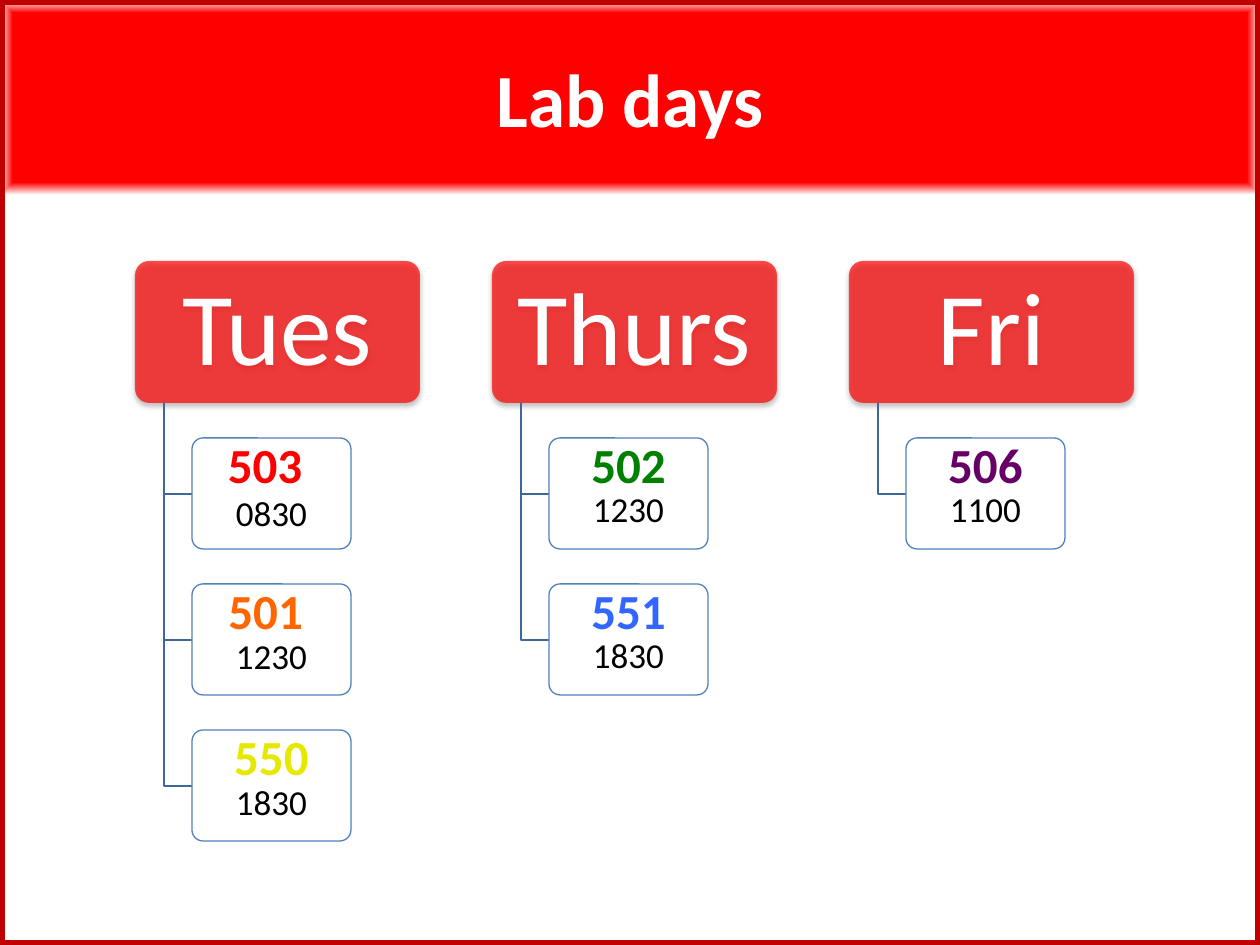
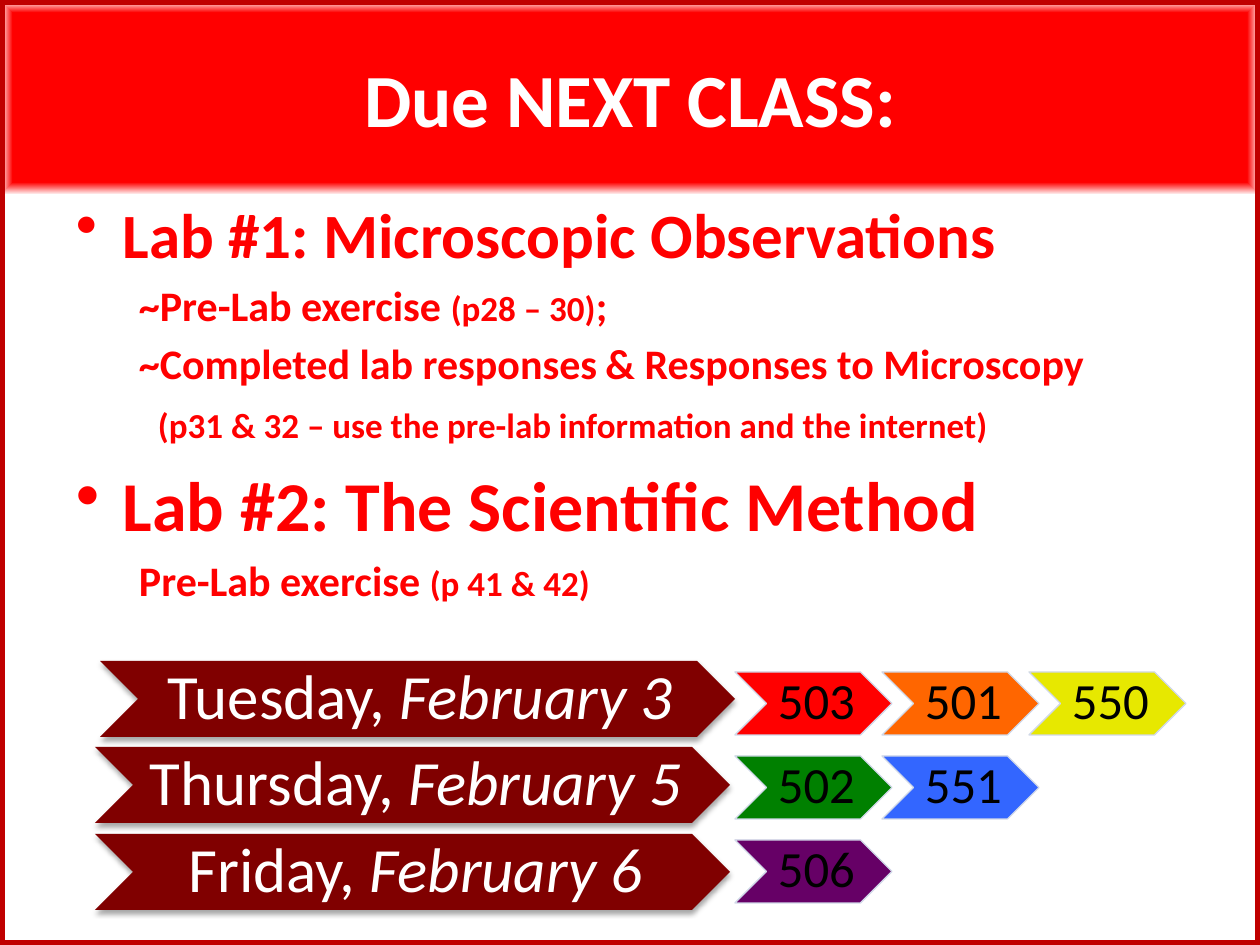
import lxml.etree
import pptx
import pptx.dml.color
import pptx.enum.dml
import pptx.enum.shapes
import pptx.enum.text
import pptx.oxml
import pptx.oxml.ns
import pptx.util

RGB = pptx.dml.color.RGBColor
SHAPES = pptx.enum.shapes.MSO_SHAPE
ALIGN = pptx.enum.text.PP_ALIGN
ANCHOR = pptx.enum.text.MSO_ANCHOR

EMU_PER_PX = 914400 // 126
WIDTH, HEIGHT, BAND_HEIGHT = 1260, 945, 195
FONT = "Calibri"
RED = RGB(0xFF, 0x00, 0x00)
WHITE = RGB(0xFF, 0xFF, 0xFF)
BLACK = RGB(0x00, 0x00, 0x00)
FRAME_RED = RGB(0xC0, 0x00, 0x00)
MAROON = RGB(0x80, 0x00, 0x00)
STEM_BLUE = RGB(0x3F, 0x67, 0x97)
CARD_BLUE = RGB(0x4F, 0x81, 0xBD)
PALE_BLUE = RGB(0xD0, 0xD8, 0xE8)
SECTION_COLORS = {
    "503": RED,
    "501": RGB(0xFF, 0x66, 0x00),
    "550": RGB(0xE7, 0xE8, 0x00),
    "502": RGB(0x00, 0x80, 0x00),
    "551": RGB(0x33, 0x66, 0xFF),
    "506": RGB(0x66, 0x00, 0x66),
}

LAB_DAYS = [
    ("Tues", [("503", "0830", 32), ("501", "1230", 29), ("550", "1830", None)]),
    ("Thurs", [("502", "1230", None), ("551", "1830", None)]),
    ("Fri", [("506", "1100", None)]),
]
DUE_DATES = [
    (100, "Tuesday, ", "February 3", ["503", "501", "550"]),
    (95, "Thursday, ", "February 5", ["502", "551"]),
    (95, "Friday, ", "February 6", ["506"]),
]
SMALL = {"size": 20}
ASSIGNMENTS = [
    ([("Lab #1: Microscopic Observations", {})],
     {"size": 36, "before": 7.2, "bullet": "•"}),
    ([("~Pre-Lab exercise ", {}), ("(p28 – 30)", SMALL), (";", {})],
     {"margin": 63}),
    ([("~Completed lab responses", {}), (" ", SMALL),
      ("& Responses to Microscopy", {})], {"margin": 63}),
    ([("(p31 & 32 – use the pre-lab information and the internet)", SMALL)],
     {"margin": 82, "before": 9}),
    ([("Lab #2: The Scientific Method", {})],
     {"size": 40, "before": 9, "bullet": "•"}),
    ([("Pre-Lab exercise ", {}), ("(p 41 & 42)", SMALL)], {"margin": 63}),
]


def px(*lengths):
    """Turn pixel lengths into EMU."""
    return [pptx.util.Emu(length * EMU_PER_PX) for length in lengths]


def xml(tag, body="", **attributes):
    """Build a DrawingML element."""
    listed = "".join(f' {name}="{value}"' for name, value in attributes.items())
    namespace = pptx.oxml.ns.nsdecls("a")
    return pptx.oxml.parse_xml(f"<a:{tag} {namespace}{listed}>{body}</a:{tag}>")


def write(frame, runs, size=24, color=BLACK, bold=False, italic=False,
          align=ALIGN.CENTER, spacing=None, before=None, after=None,
          margin=0, bullet=None):
    """Write one paragraph of (text, overrides) runs into a text frame."""
    paragraph = frame.paragraphs[0]
    if paragraph.runs:
        paragraph = frame.add_paragraph()
    paragraph.alignment = align
    paragraph.line_spacing = spacing
    if before is not None:
        paragraph.space_before = pptx.util.Pt(before)
    if after is not None:
        paragraph.space_after = pptx.util.Pt(after)
    properties = paragraph._p.get_or_add_pPr()
    if bullet:
        properties.set("marL", str(px(47)[0]))
        properties.set("indent", str(px(-47)[0]))
        properties.append(xml("buChar", char=bullet))
    elif margin:
        properties.set("marL", str(px(margin)[0]))
    for text, changes in runs:
        run = paragraph.add_run()
        run.text = text
        font = run.font
        font.name = FONT
        font.size = pptx.util.Pt(changes.get("size", size))
        font.bold = changes.get("bold", bold)
        font.italic = changes.get("italic", italic)
        font.color.rgb = color


def set_frame(frame, horizontal, vertical, right=None, anchor=ANCHOR.MIDDLE):
    """Set wrapping, anchor and insets of a text frame."""
    frame.word_wrap = True
    frame.auto_size = pptx.enum.text.MSO_AUTO_SIZE.NONE
    frame.vertical_anchor = anchor
    frame.margin_left, frame.margin_right = px(
        horizontal, horizontal if right is None else right)
    frame.margin_top, frame.margin_bottom = px(vertical, vertical)


def set_line(shape, color, width=0.75):
    """Outline a shape, or remove its outline when there is no colour."""
    if color is None:
        shape.line.fill.background()
    else:
        shape.line.color.rgb = color
        shape.line.width = pptx.util.Pt(width)


def add_panel(slide, kind, box, fill=None, line=None, width=0.75,
              opacity=100, shadow=False, corner=None):
    """Add a preset shape with its fill, outline and shadow."""
    shape = slide.shapes.add_shape(kind, *px(*box))
    shape.shadow.inherit = False
    if fill is None:
        shape.fill.background()
    else:
        shape.fill.solid()
        shape.fill.fore_color.rgb = fill
    if opacity < 100:
        color = shape._element.spPr.find(".//" + pptx.oxml.ns.qn("a:srgbClr"))
        color.append(xml("alpha", val=opacity * 1000))
    set_line(shape, line, width)
    if corner is not None:
        shape.adjustments[0] = corner
    if shadow:
        effects = shape._element.spPr.find(pptx.oxml.ns.qn("a:effectLst"))
        effects.append(xml(
            "outerShdw", '<a:srgbClr val="000000"><a:alpha val="35000"/></a:srgbClr>',
            blurRad=pptx.util.Pt(3.1), dist=pptx.util.Pt(1.8), dir=5400000,
            rotWithShape=0))
    return shape


def add_stem(slide, left, top, right, bottom):
    """Add the bent line from a day header to a section card."""
    start, end = px(left, top), px(right, bottom)
    builder = slide.shapes.build_freeform(*start)
    builder.add_line_segments([(start[0], end[1]), tuple(end)], close=False)
    stem = builder.convert_to_shape()
    stem.shadow.inherit = False
    stem.fill.background()
    set_line(stem, STEM_BLUE)


def add_titled_slide(presentation, text):
    """Add a slide with the red title band and the dark red frame."""
    slide = presentation.slides.add_slide(presentation.slide_layouts[5])
    title = slide.shapes.title
    title.left, title.top, title.width, title.height = px(0, 0, WIDTH, BAND_HEIGHT)
    stops = "".join(
        f'<a:gs pos="{position}000"><a:srgbClr val="{color}"/></a:gs>'
        for position, color in ((87, RED), (100, WHITE)))
    title._element.spPr.append(xml(
        "gradFill",
        f'<a:gsLst>{stops}</a:gsLst><a:path path="rect">'
        '<a:fillToRect l="50000" t="50000" r="50000" b="50000"/></a:path>',
        rotWithShape=1))
    set_line(title, WHITE)
    set_frame(title.text_frame, 12, 6)
    write(title.text_frame, [(text, {})], size=42.9, color=WHITE, bold=True)
    add_panel(slide, SHAPES.RECTANGLE, (0, 0, WIDTH, HEIGHT),
              line=FRAME_RED, width=6)
    return slide


def add_section_card(slide, left, top, section, time, space_size):
    """Add a card with a section number above its start time."""
    card = add_panel(slide, SHAPES.ROUNDED_RECTANGLE, (left, top, 159, 111),
                     fill=WHITE, line=CARD_BLUE, opacity=90, corner=0.1)
    set_frame(card.text_frame, 8, 5)
    runs = [(section, {})]
    if space_size:
        runs.append((" ", {"size": space_size}))
    write(card.text_frame, runs, size=28, color=SECTION_COLORS[section],
          bold=True, spacing=0.5, after=0.35 * (space_size or 28))
    write(card.text_frame, [(time, {})], size=20, spacing=0.5, after=7)


def add_day_column(slide, left, day, sections):
    """Add a day header with its section cards hanging below."""
    header = add_panel(slide, SHAPES.ROUNDED_RECTANGLE, (left, 261, 285, 142),
                       fill=RED, opacity=70, shadow=True, corner=0.1)
    set_frame(header.text_frame, 15, 10)
    write(header.text_frame, [(day, {})], size=59, color=WHITE, spacing=0.9,
          after=20.65)
    for row, section in enumerate(sections):
        top = 438 + 146 * row
        add_stem(slide, left + 29, 403, left + 57, top + 56)
        add_section_card(slide, left + 57, top, *section)


def add_chevron(slide, box, runs, size, color, **look):
    """Add a chevron with a centred label."""
    chevron = add_panel(slide, SHAPES.CHEVRON, box, **look)
    set_frame(chevron.text_frame, 6, 3, right=0)
    write(chevron.text_frame, runs, size=size, color=color, spacing=0.9,
          after=0.35 * size)


def add_due_row(slide, row, left, weekday, date, sections):
    """Add a due date followed by the sections that meet that day."""
    add_chevron(slide, (left, 661 + 173 * row // 2, 635, 76),
                [(weekday, {}), (date, {"italic": True})], 36, WHITE,
                fill=MAROON, shadow=True)
    for column, section in enumerate(sections):
        add_chevron(slide, (735 + 147 * column, 672 + 84 * row, 157, 63),
                    [(section, {})], 29, BLACK,
                    fill=SECTION_COLORS[section], line=PALE_BLUE)


def add_assignments(slide):
    """Add the list of work that is due."""
    box = slide.shapes.add_textbox(*px(63, 189, 1134, 714))
    set_frame(box.text_frame, 13, 6, anchor=ANCHOR.TOP)
    for runs, look in ASSIGNMENTS:
        write(box.text_frame, runs, **{
            "color": RED, "bold": True, "align": ALIGN.LEFT, "before": 4.8, **look})


def main():
    """Build both slides and save them."""
    presentation = pptx.Presentation()
    presentation.slide_width, presentation.slide_height = (
        pptx.util.Inches(10), pptx.util.Inches(7.5))

    lab_days = add_titled_slide(presentation, "Lab days")
    for column, (day, sections) in enumerate(LAB_DAYS):
        add_day_column(lab_days, 135 + 357 * column, day, sections)

    due = add_titled_slide(presentation, "Due NEXT CLASS:")
    add_assignments(due)
    for row, due_date in enumerate(DUE_DATES):
        add_due_row(due, row, *due_date)

    presentation.save("out.pptx")


if __name__ == "__main__":
    main()
